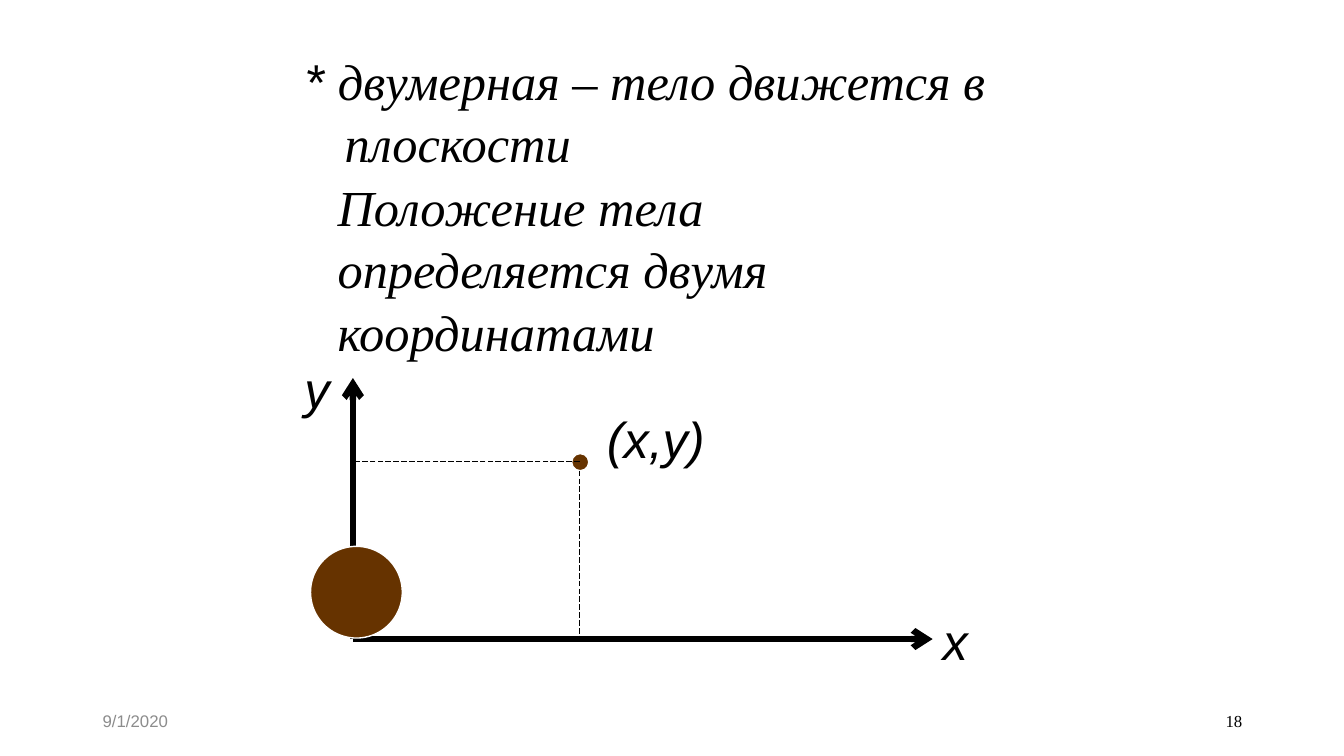
from pptx import Presentation
from pptx.dml.color import RGBColor
from pptx.enum.dml import MSO_LINE
from pptx.enum.shapes import MSO_CONNECTOR, MSO_SHAPE
from pptx.enum.text import MSO_ANCHOR, MSO_AUTO_SIZE, PP_ALIGN
from pptx.oxml.ns import qn
from pptx.util import Emu, Pt
from lxml.etree import SubElement

PX = 9144  # 100 px to the inch
COLORS = {"ink": "000000", "ball": "663300", "rim": "FFFFFF", "date": "8C8C8C"}
SANS, SERIF = "Arial", "Times New Roman"


def px(*lengths):
    return [Emu(n * PX) for n in lengths]


def color(name):
    return RGBColor.from_string(COLORS[name])


def style_run(r, font, size, ink="ink", italic=False):
    r.font.name = font
    r.font.size = Pt(size)
    r.font.italic = italic
    r.font.color.rgb = color(ink)


def add_text(s, box, lines, font, size=36, wrap=True, italic=True, ink="ink",
             align=PP_ALIGN.LEFT, spacing=1.0):
    tf = s.shapes.add_textbox(*px(*box)).text_frame
    tf.word_wrap = wrap
    tf.text = "\n".join(lines)
    for p in tf.paragraphs:
        p.alignment = align
        p.line_spacing = spacing
        for r in p.runs:
            style_run(r, font, size, ink, italic)
    return tf


def add_line(s, start, end, width, dashed=False, arrow=False):
    c = s.shapes.add_connector(MSO_CONNECTOR.STRAIGHT, *px(*start, *end))
    c.line.color.rgb = color("ink")
    c.line.width = Pt(width)
    if dashed:
        c.line.dash_style = MSO_LINE.LONG_DASH
    if arrow:
        SubElement(c.line._get_or_add_ln(), qn("a:tailEnd"), type="arrow")
    SubElement(c._element.spPr, qn("a:effectLst"))


def add_ball(s, left, top, size):
    sp = s.shapes.add_shape(MSO_SHAPE.OVAL, *px(left, top, size, size))
    sp.shadow.inherit = False
    sp.fill.solid()
    sp.fill.fore_color.rgb = color("ball")
    sp.line.color.rgb = color("rim")
    sp.line.width = Pt(1)


def add_definition(s, left, top):
    tf = add_text(s, (left, top, 842, 131), ["* "], SANS, spacing=1.04)
    p = tf.paragraphs[0]
    r = p.add_run()
    r.text = "двумерная – тело движется в плоскости"
    style_run(r, SERIF, 36, italic=True)
    indent = px(40)[0]
    pPr = p._p.get_or_add_pPr()
    pPr.set("marL", str(indent))
    pPr.set("indent", str(-indent))
    tf.auto_size = MSO_AUTO_SIZE.SHAPE_TO_FIT_TEXT

    tf = add_text(s, (left + 33, top + 125, 533, 192),
                  ["Положение тела", "определяется двумя ", "координатами"],
                  SERIF, align=PP_ALIGN.JUSTIFY, spacing=1.04)
    tf.auto_size = MSO_AUTO_SIZE.SHAPE_TO_FIT_TEXT


def add_axes(s, left, top, width, height):
    """Coordinate axes whose arrow tips touch the top and right of the box."""
    right, base = left + width, top + height
    point_x, point_y = left + 225, top + 83
    add_line(s, (left, base), (right, base), 4.5, arrow=True)
    add_line(s, (left, base), (left, top), 4.5, arrow=True)
    add_ball(s, left - 42, base - 92, 91)
    add_ball(s, point_x - 8, point_y - 8, 17)
    add_line(s, (point_x, point_y + 9), (point_x, base), 0.5, dashed=True)
    add_line(s, (point_x, point_y), (left, point_y), 0.5, dashed=True)
    for text, x, y, w in (("y", left - 58, top - 25, 45),
                          ("x", right, base - 34, 45),
                          ("(x,y)", point_x + 17, point_y - 58, 118)):
        add_text(s, (x, y, w, 71), [text], SANS, wrap=False)


def add_footer(s, left, top, width, height):
    field = 300
    for x, text, font, ink, align in (
            (left, "9/1/2020", SANS, "date", PP_ALIGN.LEFT),
            (left + width - field, "18", SERIF, "ink", PP_ALIGN.RIGHT)):
        tf = add_text(s, (x, top, field, height), [text], font, 12,
                      italic=False, ink=ink, align=align)
        tf.vertical_anchor = MSO_ANCHOR.MIDDLE


def main():
    prs = Presentation()
    prs.slide_width, prs.slide_height = px(1333, 750)
    s = prs.slides.add_slide(prs.slide_layouts[6])
    add_definition(s, 292, 42)
    add_axes(s, 350, 375, 575, 259)
    add_footer(s, 92, 695, 1150, 40)
    prs.save("out.pptx")


if __name__ == "__main__":
    main()
